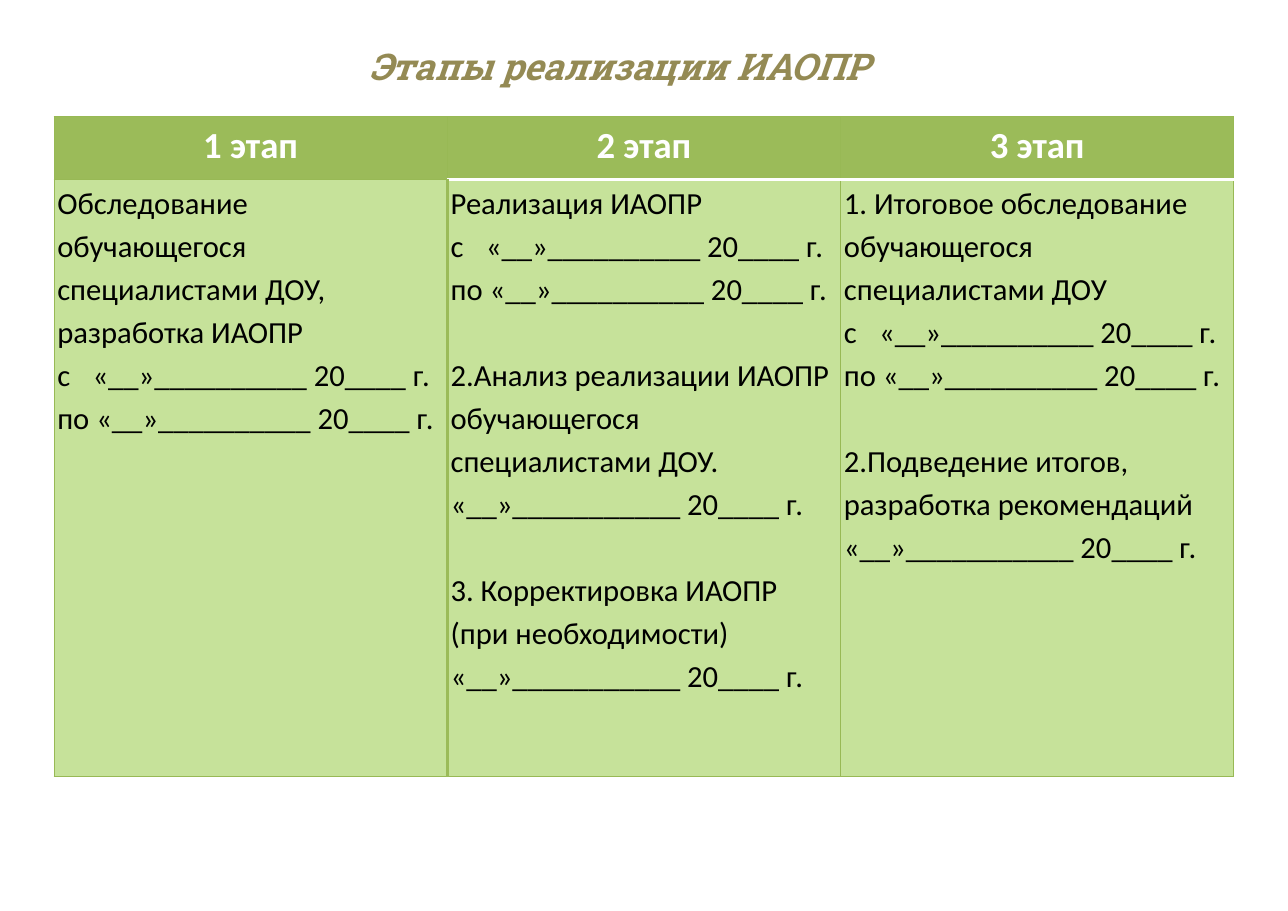
from dataclasses import dataclass

from lxml.etree import SubElement
from pptx import Presentation
from pptx.dml.color import RGBColor
from pptx.enum.text import MSO_ANCHOR, MSO_AUTO_SIZE, PP_ALIGN
from pptx.oxml.ns import qn
from pptx.util import Inches, Pt

COLOURS = {
    "title": "948A54",
    "header": "9BBB59",
    "body": "C6E29A",
    "border": "98B955",
    "white": "FFFFFF",
    "black": "000000",
}
COLUMN_WIDTH = 3.57
ROW_HEIGHTS = (0.57, 5.42)
TAB_POSITION = 0.32
LINE_GAP = 28
START_DATE = "с\t«__»__________ 20____ г."
END_DATE = "по «__»__________ 20____ г."
SINGLE_DATE = "«__»___________ 20____ г."


@dataclass
class Stage:
    """A stage of the programme, with its text in separated groups of lines."""
    heading: str
    groups: list[list[str]]


@dataclass
class Border:
    """A cell edge."""
    colour: str = "border"
    width: float = 0.75


STAGES = [
    Stage("1 этап", [
        ["Обследование обучающегося специалистами ДОУ, разработка ИАОПР",
         START_DATE, END_DATE],
    ]),
    Stage("2 этап", [
        ["Реализация ИАОПР", START_DATE, END_DATE],
        ["2.Анализ реализации ИАОПР", "обучающегося специалистами ДОУ.",
         SINGLE_DATE],
        ["3. Корректировка ИАОПР", "(при необходимости)", SINGLE_DATE],
    ]),
    Stage("3 этап", [
        ["1. Итоговое обследование", "обучающегося", "специалистами ДОУ",
         START_DATE, END_DATE],
        ["2.Подведение итогов,", "разработка рекомендаций", SINGLE_DATE],
    ]),
]


def write_text(paragraph, text: str, *, size: float, colour: str,
               font: str = "Calibri", bold: bool = False, italic: bool = False,
               align=PP_ALIGN.LEFT, line_spacing: float = 1.15,
               before: float = 0, after: float = 0) -> None:
    """Write one formatted paragraph."""
    paragraph.alignment = align
    paragraph.line_spacing = line_spacing
    paragraph.space_before = Pt(before)
    paragraph.space_after = Pt(after)
    if "\t" in text:
        tabs = SubElement(paragraph._p.get_or_add_pPr(), qn("a:tabLst"))
        SubElement(tabs, qn("a:tab"), pos=str(Inches(TAB_POSITION)), algn="l")
    run = paragraph.add_run()
    run.text = text
    run.font.name = font
    run.font.size = Pt(size)
    run.font.bold = bold
    run.font.italic = italic
    run.font.color.rgb = RGBColor.from_string(COLOURS[colour])


def format_cell(cell, fill: str, **edges: Border) -> None:
    """Set the margins, borders and fill of a cell."""
    cell.margin_left = cell.margin_right = Inches(0.03)
    cell.margin_top = cell.margin_bottom = 0
    properties = cell._tc.get_or_add_tcPr()
    for side in ("L", "R", "T", "B"):
        border = edges.get(side, Border())
        line = SubElement(properties, qn(f"a:ln{side}"), w=str(Pt(border.width)))
        solid = SubElement(line, qn("a:solidFill"))
        SubElement(solid, qn("a:srgbClr"), val=COLOURS[border.colour])
    cell.fill.solid()
    cell.fill.fore_color.rgb = RGBColor.from_string(COLOURS[fill])


def add_title(slide, text: str) -> None:
    """Place the slide title."""
    title = slide.shapes.title
    title.left, title.top = Inches(3.25), Inches(0.35)
    title.width, title.height = Inches(5.2), Inches(0.5)
    frame = title.text_frame
    frame.word_wrap = False
    frame.auto_size = MSO_AUTO_SIZE.SHAPE_TO_FIT_TEXT
    frame.vertical_anchor = MSO_ANCHOR.TOP
    write_text(frame.paragraphs[0], text, size=24, colour="title",
               font="Roboto Slab", bold=True, italic=True, line_spacing=1.0)


def write_groups(frame, groups: list[list[str]]) -> None:
    """Write groups of lines with a one-line gap between groups."""
    for group_index, lines in enumerate(groups):
        for line_index, text in enumerate(lines):
            first = group_index == line_index == 0
            paragraph = frame.paragraphs[0] if first else frame.add_paragraph()
            gap = LINE_GAP if group_index and not line_index else 0
            write_text(paragraph, text, size=20, colour="black", before=gap)


def add_stage_table(slide, stages: list[Stage]) -> None:
    """Draw one table column per stage."""
    table = slide.shapes.add_table(
        len(ROW_HEIGHTS), len(stages), Inches(0.49), Inches(1.06),
        Inches(COLUMN_WIDTH * len(stages)), Inches(sum(ROW_HEIGHTS))).table
    table.horz_banding = False
    for row, height in zip(table.rows, ROW_HEIGHTS):
        row.height = Inches(height)
    for index, stage in enumerate(stages):
        table.columns[index].width = Inches(COLUMN_WIDTH)
        header, body = table.cell(0, index), table.cell(1, index)
        divider = Border("white", 2) if index else Border()
        thick = Border("header", 2)
        format_cell(header, "header", B=divider)
        format_cell(body, "body", T=divider,
                    L=thick if index == 1 else Border(),
                    R=thick if index == 0 else Border())
        write_text(header.text_frame.paragraphs[0], stage.heading, size=24,
                   colour="white", bold=True, align=PP_ALIGN.CENTER, after=10)
        write_groups(body.text_frame, stage.groups)


def main() -> None:
    """Build and save the presentation."""
    presentation = Presentation()
    presentation.slide_width = Inches(11.69)
    presentation.slide_height = Inches(8.27)
    slide = presentation.slides.add_slide(presentation.slide_layouts[5])
    add_title(slide, "Этапы реализации ИАОПР")
    add_stage_table(slide, STAGES)
    presentation.save("out.pptx")


if __name__ == "__main__":
    main()
